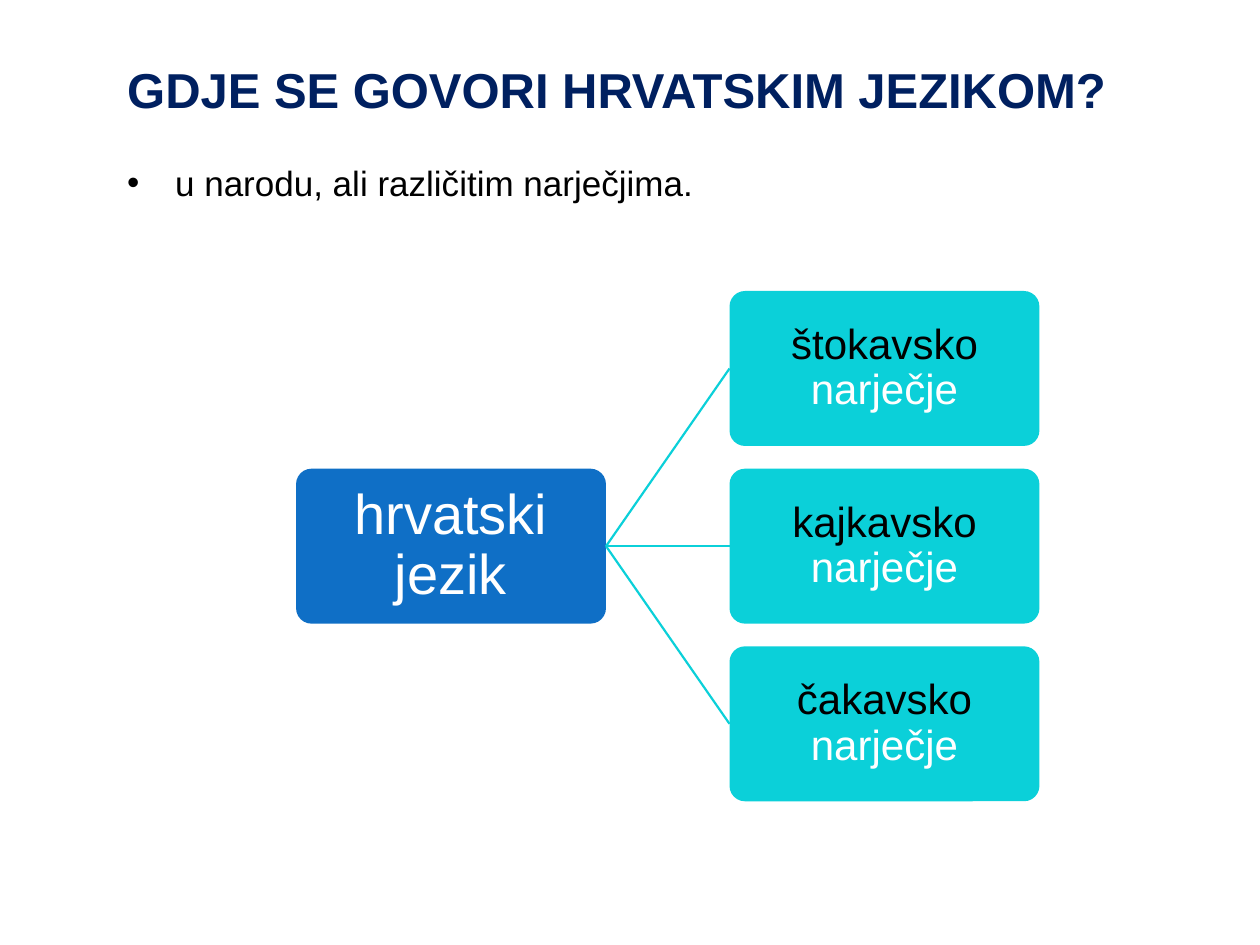
from pptx import Presentation
from pptx.dml.color import RGBColor
from pptx.enum.shapes import MSO_CONNECTOR, MSO_SHAPE
from pptx.enum.text import MSO_ANCHOR, PP_ALIGN
from pptx.oxml.ns import qn
from pptx.util import Inches, Pt
from lxml import etree

NAVY = RGBColor(0x00, 0x20, 0x60)
BLUE = RGBColor(0x0F, 0x6F, 0xC6)
CYAN = RGBColor(0x0B, 0xD0, 0xD9)
BLACK = RGBColor(0, 0, 0)
WHITE = RGBColor(0xFF, 0xFF, 0xFF)
FONT = "Arial"
ROUND_RECT = MSO_SHAPE.ROUNDED_RECTANGLE
STRAIGHT = MSO_CONNECTOR.STRAIGHT
TOP, MIDDLE = MSO_ANCHOR.TOP, MSO_ANCHOR.MIDDLE
LEFT, CENTER = PP_ALIGN.LEFT, PP_ALIGN.CENTER

BOX_W, BOX_H = 2.46, 1.23
ROOT_X, DIALECT_X = 2.35, 5.79
FIRST_Y, PITCH = 2.31, 1.41
DIALECTS = ["štokavsko", "kajkavsko", "čakavsko"]


def add_run(p, text, size, color, bold=False):
    r = p.add_run()
    r.text = text
    r.font.name = FONT
    r.font.size = Pt(size)
    r.font.bold = bold
    r.font.color.rgb = color


def add_box(x, y, fill, runs, size):
    """Add a rounded box; runs is a list of (text, colour)."""
    sp = s.shapes.add_shape(ROUND_RECT, Inches(x), Inches(y), Inches(BOX_W), Inches(BOX_H))
    sp.adjustments[0] = 0.1
    sp.shadow.inherit = False
    sp.fill.solid()
    sp.fill.fore_color.rgb = fill
    sp.line.fill.background()
    tf = sp.text_frame
    tf.word_wrap = True
    tf.vertical_anchor = MIDDLE
    tf.margin_left = tf.margin_right = tf.margin_top = tf.margin_bottom = Inches(0.02)
    p = tf.paragraphs[0]
    p.alignment = CENTER
    p.line_spacing = 0.9
    for text, color in runs:
        add_run(p, text, size, color)
    return sp


prs = Presentation()
prs.slide_width, prs.slide_height = Inches(10), Inches(7.5)
s = prs.slides.add_slide(prs.slide_layouts[1])

# Title
title = s.shapes.title
title.left, title.top, title.width, title.height = map(Inches, (0.91, 0.39, 8.03, 0.63))
title.text_frame.vertical_anchor = MIDDLE
p = title.text_frame.paragraphs[0]
p.alignment = LEFT
add_run(p, "GDJE SE GOVORI HRVATSKIM JEZIKOM?", 28, NAVY, bold=True)

# Bullet list
body = s.placeholders[1]
body.left, body.top, body.width, body.height = map(Inches, (0.91, 1.23, 5.46, 0.87))
body.text_frame.vertical_anchor = TOP
p = body.text_frame.paragraphs[0]
p.space_before = Pt(0)
pPr = p._p.get_or_add_pPr()
pPr.set("marL", str(Inches(0.38)))
pPr.set("indent", str(Inches(-0.38)))
etree.SubElement(pPr, qn("a:buFont")).set("typeface", FONT)
etree.SubElement(pPr, qn("a:buChar")).set("char", "•")
add_run(p, "u narodu, ali različitim narječjima.", 20, BLACK)

# Language tree
root = add_box(ROOT_X, FIRST_Y + PITCH, BLUE, [("hrvatski jezik", WHITE)], 32)
for i, dialect in enumerate(DIALECTS):
    runs = [(dialect + " ", BLACK), ("narječje", WHITE)]
    box = add_box(DIALECT_X, FIRST_Y + i * PITCH, CYAN, runs, 24)
    link = s.shapes.add_connector(STRAIGHT, 0, 0, 0, 0)
    link.begin_connect(root, 3)
    link.end_connect(box, 1)
    link.line.color.rgb = CYAN
    link.line.width = Pt(1.25)
    etree.SubElement(link._element.spPr, qn("a:effectLst"))

prs.save("out.pptx")
